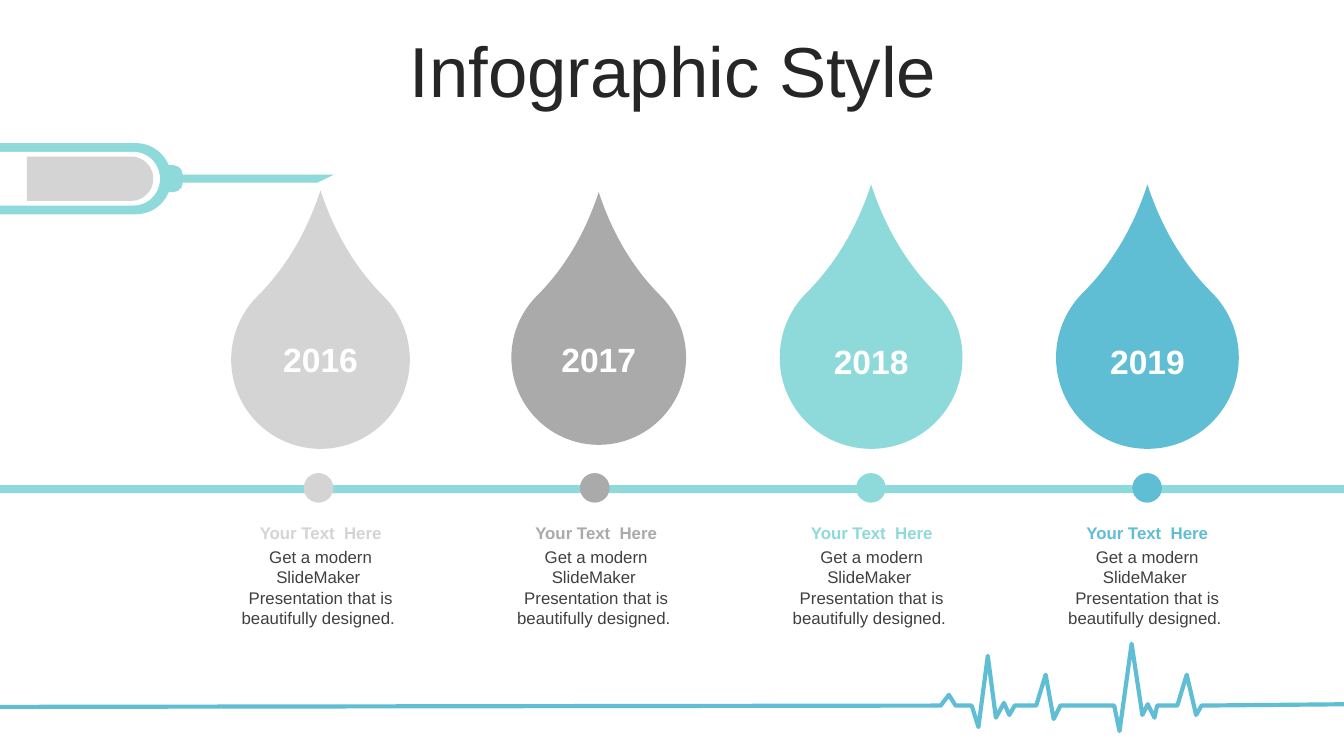
"""Build a drop-shaped timeline slide with a syringe and a heartbeat line."""
from dataclasses import dataclass

from pptx import Presentation
from pptx.dml.color import RGBColor
from pptx.enum.shapes import MSO_SHAPE
from pptx.enum.text import MSO_ANCHOR, MSO_AUTO_SIZE, PP_ALIGN
from pptx.util import Emu, Inches, Pt

COLS, ROWS = 100, 56.25
CELL = Inches(0.1)
FONT = "Arial"
SILVER = RGBColor(0xD4, 0xD4, 0xD4)
GRAY = RGBColor(0xAA, 0xAA, 0xAA)
MINT = RGBColor(0x8E, 0xDA, 0xDA)
BLUE = RGBColor(0x60, 0xBE, 0xD4)
WHITE = RGBColor(0xFF, 0xFF, 0xFF)
INK = RGBColor(0x26, 0x26, 0x26)
BODY = RGBColor(0x40, 0x40, 0x40)

HEADING = "Your Text  Here"
DETAIL = "Get a modern SlideMaker  Presentation that is beautifully designed. "
FIRST_DOT, DOT_STEP = 23.7, 20.55
FIRST_TEXT, TEXT_STEP = 23.85, 20.5
AXIS_ROW, SYRINGE_ROW = 36.4, 13.3


@dataclass(frozen=True)
class Milestone:
    year: str
    color: RGBColor
    drop_col: float
    drop_row: float
    drop_size: float
    year_row: float


@dataclass(frozen=True)
class Part:
    kind: MSO_SHAPE
    left: float
    length: float
    thickness: float
    color: RGBColor
    turned: bool = True


MILESTONES = [
    Milestone("2016", SILVER, 23.85, 26.75, 13.3, 26.75),
    Milestone("2017", GRAY, 44.55, 26.6, 13, 26.75),
    Milestone("2018", MINT, 64.82, 26.6, 13.6, 26.9),
    Milestone("2019", BLUE, 85.38, 26.6, 13.6, 26.9),
]
SYRINGE = [
    Part(MSO_SHAPE.ROUND_2_SAME_RECTANGLE, 0, 12.75, 5.3, MINT),
    Part(MSO_SHAPE.ROUND_2_SAME_RECTANGLE, -0.1, 12, 4, WHITE),
    Part(MSO_SHAPE.ROUND_2_SAME_RECTANGLE, 12.2, 1.4, 2, MINT),
    Part(MSO_SHAPE.RECTANGLE, 13.6, 10, 0.6, MINT, False),
    Part(MSO_SHAPE.RIGHT_TRIANGLE, 23.6, 1.25, 0.6, MINT),
    Part(MSO_SHAPE.ROUND_2_SAME_RECTANGLE, 2, 9.4, 3.3, SILVER),
]
HEARTBEAT = [
    (100, 52.4), (89.4, 52.5), (89, 53.2), (88.3, 50.2), (87.6, 52.5),
    (86.1, 52.5), (85.9, 53.4), (85.4, 52.4), (85, 53.2), (84.2, 47.9),
    (83.3, 54.4), (82.9, 52.5), (78.9, 52.5), (78.4, 53.5), (77.8, 50.2),
    (77.1, 52.5), (75.5, 52.5), (75.1, 53.2), (74.7, 52.3), (74.1, 53.4),
    (73.5, 48.8), (72.8, 54.1), (72.3, 52.5), (71.1, 52.5), (70.6, 51.7),
    (70, 52.5), (-0.2, 52.6),
]


def cells(n: float) -> Emu:
    """Turn a number of grid cells into a length."""
    return Emu(round(n * CELL))


def box(col: float, row: float, width: float, height: float) -> list[Emu]:
    """Return left, top, width and height of a box centred on a grid point."""
    return [cells(n) for n in (col - width / 2, row - height / 2, width, height)]


def add_figure(slide, kind: MSO_SHAPE, col: float, row: float, width: float,
               height: float, color: RGBColor, rotation: float = 0):
    """Draw a flat filled shape centred on a grid point."""
    sp = slide.shapes.add_shape(kind, *box(col, row, width, height))
    sp.rotation = rotation
    sp.shadow.inherit = False
    sp.fill.solid()
    sp.fill.fore_color.rgb = color
    sp.line.fill.background()
    return sp


def style_text(tf, size: float, color: RGBColor, bold: bool = False) -> None:
    """Centre the text and format its runs."""
    tf.word_wrap = True
    for p in tf.paragraphs:
        p.alignment = PP_ALIGN.CENTER
        for r in p.runs:
            r.font.name, r.font.size, r.font.bold = FONT, Pt(size), bold
            r.font.color.rgb = color


def set_tight_margins(tf) -> None:
    """Give a text frame narrow margins."""
    tf.margin_left = tf.margin_right = cells(0.7)
    tf.margin_top = tf.margin_bottom = cells(0.4)


def add_label(slide, text: str, col: float, row: float, width: float,
              height: float, size: float, color: RGBColor, bold: bool = False):
    """Write a text box centred on a grid point and return its frame."""
    tf = slide.shapes.add_textbox(*box(col, row, width, height)).text_frame
    tf.text = text
    tf.auto_size = MSO_AUTO_SIZE.SHAPE_TO_FIT_TEXT
    style_text(tf, size, color, bold)
    return tf


def add_title(slide, text: str) -> None:
    """Place and format the title placeholder."""
    sp = slide.shapes.title
    sp.left, sp.top, sp.width, sp.height = box(50.1, 5.75, 94.9, 5.9)
    tf = sp.text_frame
    tf.text = text
    tf.auto_size = MSO_AUTO_SIZE.NONE
    tf.vertical_anchor = MSO_ANCHOR.MIDDLE
    set_tight_margins(tf)
    p = tf.paragraphs[0]
    p.line_spacing, p.space_before = 0.8, Pt(7.5)
    style_text(tf, 37.9, INK)


def add_heartbeat(slide) -> None:
    """Draw the heartbeat as one open line."""
    start, *points = [(cells(x), cells(y)) for x, y in HEARTBEAT]
    builder = slide.shapes.build_freeform(*start)
    builder.add_line_segments(points, close=False)
    sp = builder.convert_to_shape()
    sp.shadow.inherit = False
    sp.fill.background()
    sp.line.color.rgb = BLUE
    sp.line.width = Pt(2.25)


def add_part(slide, part: Part) -> None:
    """Draw one part of the syringe along its axis."""
    size = (part.length, part.thickness)
    if part.turned:
        size = size[::-1]
    sp = add_figure(slide, part.kind, part.left + part.length / 2, SYRINGE_ROW,
                    *size, part.color, 90 if part.turned else 0)
    if part.kind == MSO_SHAPE.ROUND_2_SAME_RECTANGLE:
        sp.adjustments[0] = 0.5


def add_milestone(slide, index: int, item: Milestone) -> None:
    """Draw the drop, year, dot and texts of one milestone."""
    col = FIRST_TEXT + index * TEXT_STEP
    drop = add_figure(slide, MSO_SHAPE.TEAR, item.drop_col, item.drop_row,
                      item.drop_size, item.drop_size, item.color, 315)
    drop.adjustments[0] = 1.339
    add_label(slide, DETAIL, col, 43.75, 13.9, 7.1, 9, BODY)
    add_label(slide, HEADING, col, 39.65, 13.9, 2.5, 9, item.color, True)
    add_figure(slide, MSO_SHAPE.OVAL, FIRST_DOT + index * DOT_STEP, AXIS_ROW - 0.1,
               2.2, 2.2, item.color)
    tf = add_label(slide, item.year, item.drop_col, item.year_row, 7.8, 3.8, 18,
                   WHITE, True)
    set_tight_margins(tf)


def main() -> None:
    """Build and save the slide."""
    prs = Presentation()
    prs.slide_width, prs.slide_height = cells(COLS), cells(ROWS)
    slide = prs.slides.add_slide(prs.slide_layouts[5])
    add_heartbeat(slide)
    add_title(slide, "Infographic Style")
    for part in SYRINGE:
        add_part(slide, part)
    add_figure(slide, MSO_SHAPE.RECTANGLE, COLS / 2, AXIS_ROW, COLS, 0.6, MINT)
    for index, item in enumerate(MILESTONES):
        add_milestone(slide, index, item)
    prs.save("out.pptx")


if __name__ == "__main__":
    main()
